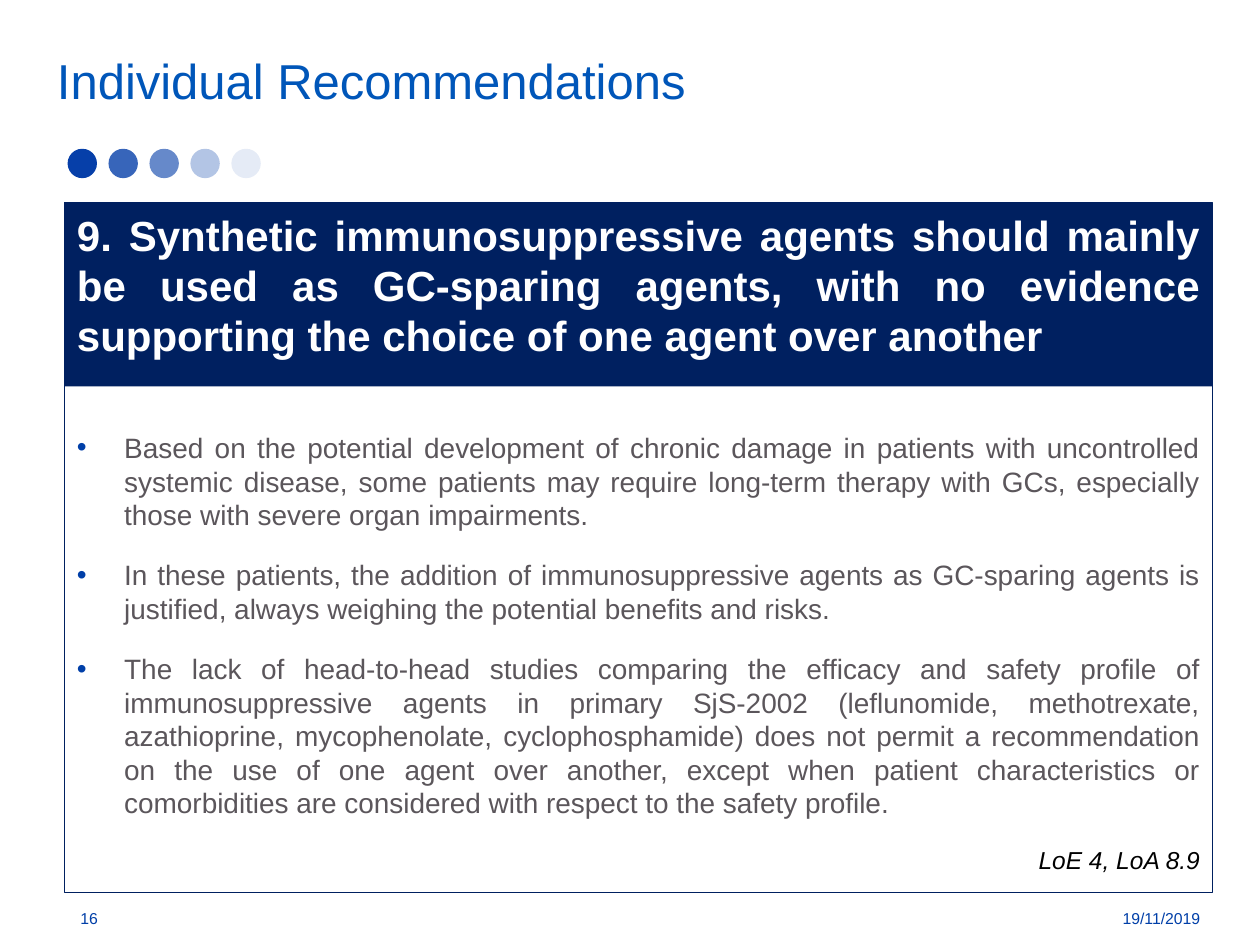
from lxml import etree
from pptx import Presentation
from pptx.dml.color import RGBColor
from pptx.enum.shapes import MSO_SHAPE
from pptx.enum.text import MSO_ANCHOR, PP_ALIGN
from pptx.oxml.ns import qn
from pptx.util import Pt

COLORS = {
    "dot": "063FA9",
    "navy": "002060",
    "blue": "003FA8",
    "title": "0056B9",
    "gray": "5B565B",
    "white": "FFFFFF",
    "black": "000000",
}
FONT = "Arial"
LEFT, TOP, WIDTH = 36.9, 115.9, 656
HEAD = "9. Synthetic immunosuppressive agents should mainly be used as GC-sparing agents, with no evidence supporting the choice of one agent over another"
POINTS = [
    "Based on the potential development of chronic damage in patients with uncontrolled systemic disease, some patients may require long-term therapy with GCs, especially those with severe organ impairments.",
    "In these patients, the addition of immunosuppressive agents as GC-sparing agents is justified, always weighing the potential benefits and risks.",
    "The lack of head-to-head studies comparing the efficacy and safety profile of immunosuppressive agents in primary SjS-2002 (leflunomide, methotrexate, azathioprine, mycophenolate, cyclophosphamide) does not permit a recommendation on the use of one agent over another, except when patient characteristics or comorbidities are considered with respect to the safety profile.",
]


def color(name):
    return RGBColor.from_string(COLORS[name])


def add_shape(slide, kind, box, fill=None, line=None, alpha=100):
    shape = slide.shapes.add_shape(kind, *map(Pt, box))
    shape.shadow.inherit = False
    if fill:
        shape.fill.solid()
        shape.fill.fore_color.rgb = color(fill)
        if alpha < 100:
            tint = shape.fill._xPr.find(qn("a:solidFill"))[0]
            etree.SubElement(tint, qn("a:alpha"), val=str(alpha * 1000))
    else:
        shape.fill.background()
    if line:
        shape.line.color.rgb = color(line)
        shape.line.width = Pt(0.75)
    else:
        shape.line.fill.background()
    return shape


def style(para, text, size, tone, align=PP_ALIGN.LEFT, bold=False, italic=False):
    para.text = text
    para.alignment = align
    font = para.font
    font.name, font.size = FONT, Pt(size)
    font.bold, font.italic = bold, italic
    font.color.rgb = color(tone)


def add_bullet(para):
    props = para._p.get_or_add_pPr()
    props.set("marL", str(Pt(27)))
    props.set("indent", str(-Pt(27)))
    tint = etree.SubElement(props, qn("a:buClr"))
    etree.SubElement(tint, qn("a:srgbClr"), val=COLORS["blue"])
    etree.SubElement(props, qn("a:buFont"), typeface=FONT)
    etree.SubElement(props, qn("a:buChar"), char="•")


def add_label(slide, text, box, size, tone, align=PP_ALIGN.LEFT, anchor=MSO_ANCHOR.MIDDLE):
    frame = slide.shapes.add_textbox(*map(Pt, box)).text_frame
    frame.word_wrap = True
    frame.vertical_anchor = anchor
    style(frame.paragraphs[0], text, size, tone, align)


def add_dots(slide):
    for i, alpha in enumerate((100, 80, 61, 30, 10)):
        box = (38.6 + 23.4 * i, 85, 16.8, 16.8)
        add_shape(slide, MSO_SHAPE.OVAL, box, "dot", alpha=alpha)


def add_body(slide):
    box = (LEFT, TOP, WIDTH, 394.2)
    frame = add_shape(slide, MSO_SHAPE.RECTANGLE, box, line="navy").text_frame
    frame.word_wrap = True
    frame.vertical_anchor = MSO_ANCHOR.TOP
    style(frame.paragraphs[0], HEAD, 24, "white", PP_ALIGN.JUSTIFY, bold=True)
    for i, text in enumerate(POINTS):
        para = frame.add_paragraph()
        para.space_before = Pt(3.2 if i else 28.2)
        add_bullet(para)
        style(para, text, 16, "gray", PP_ALIGN.JUSTIFY)
    para = frame.add_paragraph()
    para.space_before = Pt(2.8)
    style(para, "LoE 4, LoA 8.9", 14, "black", PP_ALIGN.RIGHT, italic=True)
    for para in frame.paragraphs:
        para.space_after = Pt(12)


def main():
    deck = Presentation()
    deck.slide_width, deck.slide_height = Pt(720), Pt(540)
    slide = deck.slides.add_slide(deck.slide_layouts[6])
    add_dots(slide)
    add_shape(slide, MSO_SHAPE.RECTANGLE, (LEFT, TOP, WIDTH, 105), "navy")
    add_label(slide, "16", (38.8, 510.5, 69, 28.8), 9, "blue")
    add_label(slide, "19/11/2019", (596.6, 510.5, 96.3, 28.8), 9, "blue", PP_ALIGN.RIGHT)
    add_body(slide)
    add_label(slide, "Individual Recommendations", (25.5, 25.1, WIDTH, 49.7), 28, "title", anchor=MSO_ANCHOR.TOP)
    deck.save("out.pptx")


if __name__ == "__main__":
    main()
